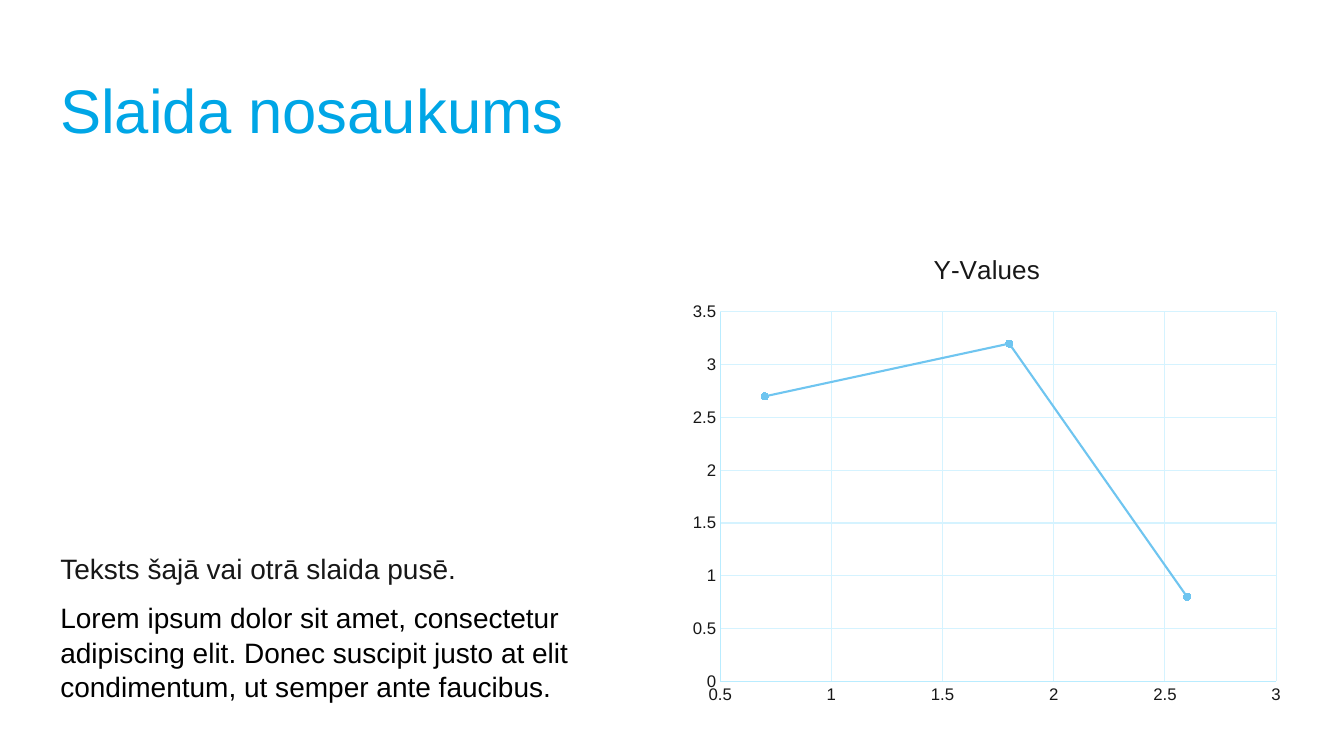
"""Build a slide with a title, a text column and a smooth scatter chart."""
from dataclasses import dataclass

from lxml import etree
from pptx import Presentation
from pptx import util as u
from pptx.chart import data as chart_data
from pptx.dml import color
from pptx.enum import chart as chart_enum
from pptx.enum import text

FONT = "Arial"
BLUE, INK, BLACK = "00A6E6", "171717", "000000"
CURVE, AXIS, GRID = "6FC5F0", "B9ECFF", "D5F3FF"
PLOT_AREA = {"x": 0.065, "y": 0.165, "w": 0.907, "h": 0.77}


@dataclass
class Line:
    wording: str
    size: float
    colour: str
    spacing: float
    before: float = 0


@dataclass
class Block:
    left: float
    top: float
    width: float
    height: float
    anchor: text.MSO_ANCHOR
    lines: list[Line]


BLOCKS = [
    Block(36, 28.8, 773.3, 104.4, text.MSO_ANCHOR.MIDDLE,
          [Line("Slaida nosaukums", 44, BLUE, 0.9)]),
    Block(36, 163.4, 414, 342.7, text.MSO_ANCHOR.BOTTOM, [
        Line("Teksts šajā vai otrā slaida pusē.", 20, INK, 1.04),
        Line("Lorem ipsum dolor sit amet, consectetur adipiscing elit. "
             "Donec suscipit justo at elit condimentum, ut semper ante faucibus.",
             20, BLACK, 1.04, 10),
    ]),
]


def rgb(value: str) -> color.RGBColor:
    return color.RGBColor.from_string(value)


def apply(target: object, values: dict) -> None:
    for name, value in values.items():
        setattr(target, name, value)


def style_font(font, size: float, colour: str) -> None:
    apply(font, {"name": FONT, "size": u.Pt(size), "bold": False})
    font.color.rgb = rgb(colour)


def style_line(line, colour: str, width: float) -> None:
    line.color.rgb = rgb(colour)
    line.width = u.Pt(width)


def add_block(slide, block: Block) -> None:
    box = slide.shapes.add_textbox(
        u.Pt(block.left), u.Pt(block.top), u.Pt(block.width), u.Pt(block.height))
    frame = box.text_frame
    apply(frame, {"word_wrap": True, "vertical_anchor": block.anchor})
    for index, line in enumerate(block.lines):
        paragraph = frame.add_paragraph() if index else frame.paragraphs[0]
        paragraph.line_spacing = line.spacing
        if line.before:
            paragraph.space_before = u.Pt(line.before)
        run = paragraph.add_run()
        run.text = line.wording
        style_font(run.font, line.size, line.colour)


def style_axis(axis, low: float, high: float) -> None:
    tick_none = chart_enum.XL_TICK_MARK.NONE
    apply(axis, {"minimum_scale": low, "maximum_scale": high, "major_unit": 0.5,
                 "major_tick_mark": tick_none, "minor_tick_mark": tick_none,
                 "has_major_gridlines": True})
    style_line(axis.format.line, AXIS, 0.75)
    style_line(axis.major_gridlines.format.line, GRID, 0.75)
    style_font(axis.tick_labels.font, 12, INK)
    apply(axis.tick_labels, {"number_format": "General",
                             "number_format_is_linked": False})


def place_plot(chart) -> None:
    plot_area = chart.plots[0]._element.getparent()
    namespace = etree.QName(plot_area).namespace
    for old in plot_area.findall(f"{{{namespace}}}layout"):
        plot_area.remove(old)
    layout = etree.Element(f"{{{namespace}}}layout")
    manual = etree.SubElement(layout, f"{{{namespace}}}manualLayout")
    settings = {"layoutTarget": "inner", "xMode": "edge", "yMode": "edge", **PLOT_AREA}
    for name, value in settings.items():
        etree.SubElement(manual, f"{{{namespace}}}{name}").set("val", str(value))
    plot_area.insert(0, layout)


def add_curve(slide) -> None:
    values = chart_data.XyChartData()
    points = values.add_series("Y-Values")
    for x, y in [(0.7, 2.7), (1.8, 3.2), (2.6, 0.8)]:
        points.add_data_point(x, y)
    chart = slide.shapes.add_chart(
        chart_enum.XL_CHART_TYPE.XY_SCATTER_SMOOTH,
        u.Pt(486), u.Pt(166.3), u.Pt(437.8), u.Pt(342.7), values).chart
    style_font(chart.font, 10, BLUE)
    apply(chart, {"has_legend": False, "has_title": True})
    heading = chart.chart_title.text_frame.paragraphs[0].add_run()
    heading.text = "Y-Values"
    style_font(heading.font, 18.6, INK)
    style_axis(chart.category_axis, 0.5, 3)
    style_axis(chart.value_axis, 0, 3.5)
    place_plot(chart)

    chart.plots[0].vary_by_categories = False
    curve = chart.plots[0].series[0]
    curve.smooth = True
    style_line(curve.format.line, CURVE, 1.5)
    marker = curve.marker
    apply(marker, {"style": chart_enum.XL_MARKER_STYLE.CIRCLE, "size": 5})
    marker.format.fill.solid()
    marker.format.fill.fore_color.rgb = rgb(CURVE)
    style_line(marker.format.line, CURVE, 0.75)


def main() -> None:
    deck = Presentation()
    apply(deck, {"slide_width": u.Pt(960), "slide_height": u.Pt(540)})
    slide = deck.slides.add_slide(deck.slide_layouts[6])
    for block in BLOCKS:
        add_block(slide, block)
    add_curve(slide)
    deck.save("out.pptx")


if __name__ == "__main__":
    main()
